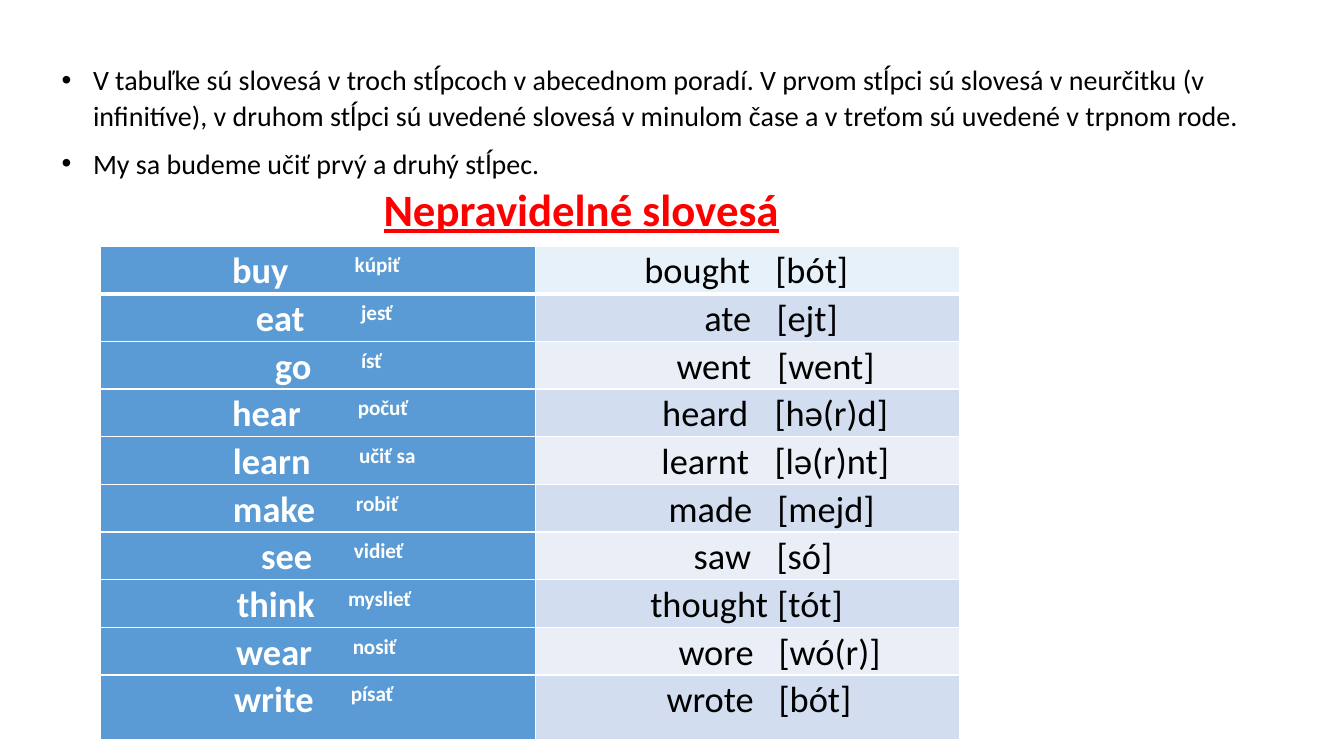
import collections

import pptx
import pptx.dml.color
import pptx.enum.text
import pptx.oxml
import pptx.oxml.ns
import pptx.util

Cm, Pt = pptx.util.Cm, pptx.util.Pt
RGBColor = pptx.dml.color.RGBColor
ALIGN = pptx.enum.text.PP_ALIGN
ANCHOR = pptx.enum.text.MSO_ANCHOR
AUTO_SIZE = pptx.enum.text.MSO_AUTO_SIZE

BLACK = RGBColor(0x00, 0x00, 0x00)
WHITE = RGBColor(0xFF, 0xFF, 0xFF)
RED = RGBColor(0xFF, 0x00, 0x00)
VERB_BLUE = RGBColor(0x5B, 0x9B, 0xD5)
TOP_BLUE = RGBColor(0xBD, 0xD7, 0xEE)
BANDS = (RGBColor(0xEA, 0xEF, 0xF7), RGBColor(0xD2, 0xDE, 0xEF))

Box = collections.namedtuple("Box", "left top width height")
# Words with the distance in cm from the cell edge at which each begins.
Pair = collections.namedtuple("Pair", "word start note note_start")

INTRO = (
    "V\u00a0tabuľke sú slovesá v\u00a0troch stĺpcoch v\u00a0abecednom poradí. "
    "V\u00a0prvom stĺpci sú slovesá v\u00a0neurčitku (v infinitíve), v druhom "
    "stĺpci sú uvedené slovesá v minulom čase a\u00a0v\u00a0treťom sú uvedené "
    "v\u00a0trpnom rode.",
    "My sa budeme učiť prvý a druhý stĺpec.",
)
VERBS = (
    (Pair("buy", 3.31, "kúpiť", 6.4), Pair("bought", 2.75, "[bót]", 6.05)),
    (Pair("eat", 3.91, "jesť", 6.56), Pair("ate", 4.26, "[ejt]", 6.08)),
    (Pair("go", 4.39, "ísť", 6.56), Pair("went", 3.56, "[went]", 6.1)),
    (Pair("hear", 3.31, "počuť", 6.48), Pair("heard", 3.2, "[hǝ(r)d]", 6.03)),
    (Pair("learn", 3.33, "učiť sa", 6.51), Pair("learnt", 3.18, "[lǝ(r)nt]", 6.03)),
    (Pair("make", 3.33, "robiť", 6.43), Pair("made", 3.36, "[mejd]", 6.1)),
    (Pair("see", 4.04, "vidieť", 6.38), Pair("saw", 3.99, "[só]", 6.08)),
    (Pair("think", 3.43, "myslieť", 6.23), Pair("thought", 2.9, "[tót]", 6.1)),
    (Pair("wear", 3.41, "nosiť", 6.35), Pair("wore", 3.61, "[wó(r)]", 6.13)),
    (Pair("write", 3.36, "písať", 6.3), Pair("wrote", 3.31, "[bót]", 6.13)),
)


def apply(target, values):
    for name, value in values.items():
        setattr(target, name, value)


def add_span(para, text, color, **values):
    span = para.add_run()
    span.text = text
    apply(span.font, {"name": "Calibri", **values})
    span.font.color.rgb = color
    return span


def fill_intro(body, box):
    apply(body, box._asdict())
    frame = body.text_frame
    apply(frame, {"word_wrap": True, "auto_size": AUTO_SIZE.NONE})
    for index, text in enumerate(INTRO):
        para = frame.add_paragraph() if index else frame.paragraphs[0]
        apply(para, {"line_spacing": 1.07, "space_before": Pt(0), "space_after": Pt(8)})
        properties = para._p.get_or_add_pPr()
        properties.set("marL", str(Cm(0.79)))
        properties.set("indent", str(Cm(-0.79)))
        add_span(para, text, BLACK, size=Pt(20))


def fill_title(title, box):
    apply(title, box._asdict())
    frame = title.text_frame
    apply(frame, {"word_wrap": True, "auto_size": AUTO_SIZE.NONE,
                  "vertical_anchor": ANCHOR.MIDDLE,
                  "margin_top": Cm(0.79), "margin_bottom": Cm(0.13)})
    para = frame.paragraphs[0]
    apply(para, {"alignment": ALIGN.RIGHT, "line_spacing": 1.0})
    add_span(para, "Nepravidelné slovesá", RED, size=Pt(32), bold=True, underline=True)


def add_borders(cell, bottom_width):
    properties = cell._tc.get_or_add_tcPr()
    widths = {"lnL": 1, "lnR": 1, "lnT": 1, "lnB": bottom_width}
    for tag, width in widths.items():
        properties.append(pptx.oxml.parse_xml(
            f'<a:{tag} {pptx.oxml.ns.nsdecls("a")} w="{Pt(width)}">'
            f'<a:solidFill><a:srgbClr val="{WHITE}"/></a:solidFill></a:{tag}>'))


def fill_cell(cell, pair, is_verb):
    """Write a word and, at a tab stop, its translation or pronunciation."""
    apply(cell, {"margin_left": Cm(pair.start), "margin_right": Cm(0.18),
                 "margin_top": 0, "margin_bottom": 0})
    para = cell.text_frame.paragraphs[0]
    apply(para, {"alignment": ALIGN.LEFT, "line_spacing": 1.07})
    stop = Cm(round(pair.note_start - pair.start, 2))
    para._p.get_or_add_pPr().append(pptx.oxml.parse_xml(
        f'<a:tabLst {pptx.oxml.ns.nsdecls("a")}><a:tab pos="{stop}" algn="l"/></a:tabLst>'))
    look = {"color": WHITE if is_verb else BLACK, "size": Pt(26), "bold": is_verb}
    add_span(para, pair.word, **look)
    note = add_span(para, "\t" + pair.note, **look)
    if is_verb:
        note._r.get_or_add_rPr().set("baseline", "30000")


def paint_cell(cell, row, is_verb):
    add_borders(cell, 1 if row else 3)
    cell.fill.solid()
    color = cell.fill.fore_color
    if is_verb:
        color.rgb = VERB_BLUE
    elif row:
        color.rgb = BANDS[row % 2]
    else:
        color.rgb = TOP_BLUE
        shade = cell._tc.tcPr.find(pptx.oxml.ns.qn("a:solidFill"))[0]
        shade.append(pptx.oxml.parse_xml(
            f'<a:alpha {pptx.oxml.ns.nsdecls("a")} val="35000"/>'))


def add_verb_table(page, box):
    table = page.shapes.add_table(len(VERBS), 2, *box).table
    table.columns[0].width = Cm(10.95)
    table.columns[1].width = box.width - Cm(10.95)
    row_height = Cm(1.2)
    for row, pairs in enumerate(VERBS):
        table.rows[row].height = row_height
        for column, pair in enumerate(pairs):
            cell = table.cell(row, column)
            fill_cell(cell, pair, column == 0)
            paint_cell(cell, row, column == 0)
    table.rows[len(VERBS) - 1].height = box.height - row_height * (len(VERBS) - 1)


def build_verbs_page(deck):
    page = deck.slides.add_slide(deck.slide_layouts[1])
    fill_intro(page.placeholders[1], Box(Cm(1.3), Cm(1.4), Cm(30.91), Cm(3.25)))
    add_verb_table(page, Box(Cm(2.54), Cm(6.2), Cm(21.64), Cm(12.42)))
    fill_title(page.shapes.title, Box(Cm(5.26), Cm(3.05), Cm(14.63), Cm(3.76)))


def main():
    deck = pptx.Presentation()
    apply(deck, {"slide_width": Cm(33.87), "slide_height": Cm(19.05)})
    build_verbs_page(deck)
    deck.save("out.pptx")


if __name__ == "__main__":
    main()
